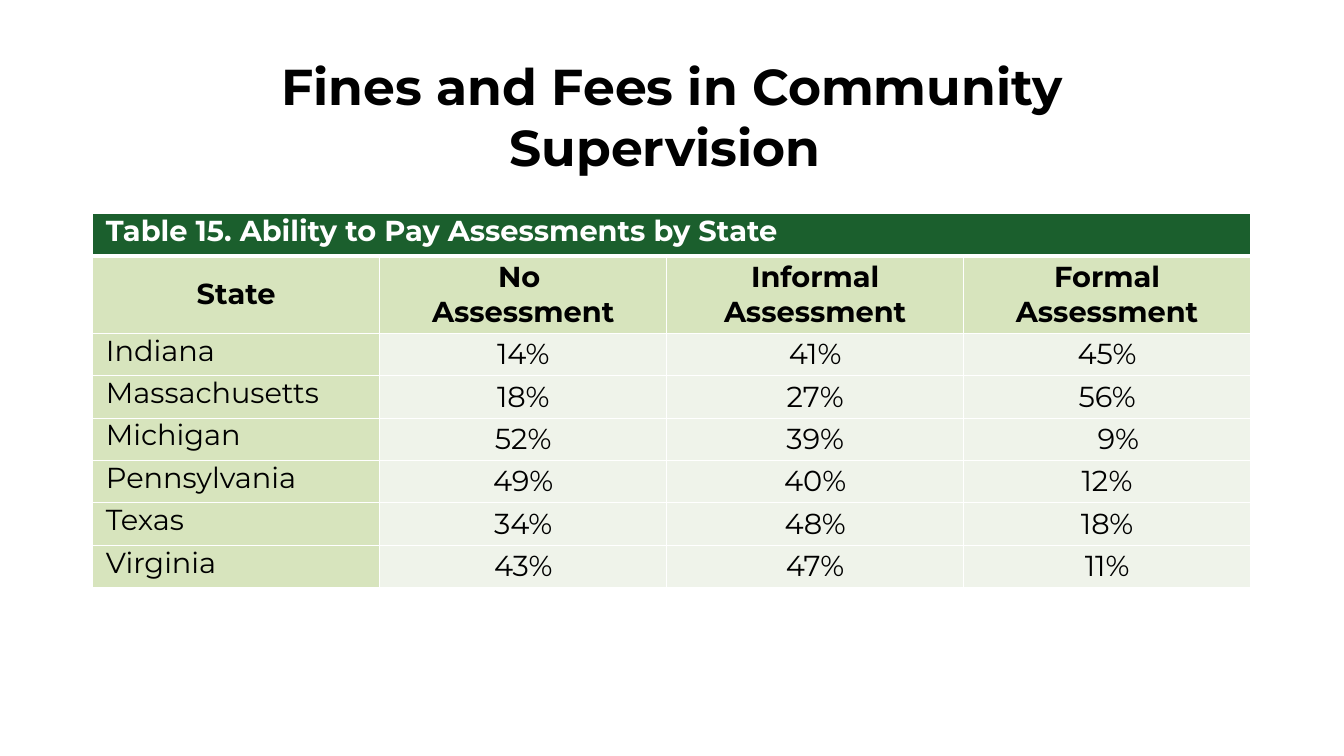
from dataclasses import dataclass

from lxml import etree
from pptx import Presentation
from pptx.dml.color import RGBColor
from pptx.enum import text
from pptx.oxml import ns
from pptx.util import Cm, Pt


@dataclass(frozen=True)
class Theme:
    font: str = "Montserrat"
    title_size: float = 38.4
    table_size: float = 22
    ink: str = "000000"
    white: str = "FFFFFF"
    banner: str = "1B5F2D"
    label: str = "D7E4BD"
    value: str = "EFF3EA"
    inset: float = 0.36


class SlideBuilder:
    def __init__(self, slide, theme):
        self.slide = slide
        self.theme = theme

    def add_lines(self, frame, lines, size, color, bold, align):
        for index, line in enumerate(lines):
            paragraph = frame.paragraphs[0] if index == 0 else frame.add_paragraph()
            paragraph.alignment = align
            run = paragraph.add_run()
            run.text = line
            run.font.name = self.theme.font
            run.font.size = Pt(size)
            run.font.bold = bold
            run.font.color.rgb = RGBColor.from_string(color)

    def title(self, words, left, top, width, height):
        shape = self.slide.shapes.add_textbox(Cm(left), Cm(top), Cm(width), Cm(height))
        frame = shape.text_frame
        frame.word_wrap = True
        frame.vertical_anchor = text.MSO_ANCHOR.MIDDLE
        frame.margin_left = frame.margin_right = Cm(self.theme.inset)
        self.add_lines(frame, [words], self.theme.title_size, self.theme.ink, True,
                       text.PP_ALIGN.CENTER)

    def table(self, left, top, widths, heights):
        frame = self.slide.shapes.add_table(
            len(heights), len(widths), Cm(left), Cm(top),
            Cm(sum(widths)), Cm(sum(heights)))
        table = frame.table
        for column, width in zip(table.columns, widths):
            column.width = Cm(width)
        for row, height in zip(table.rows, heights):
            row.height = Cm(height)
        return table

    def borders(self, cell, top, bottom):
        properties = cell._tc.get_or_add_tcPr()
        for side, points in (("L", 1), ("R", 1), ("T", top), ("B", bottom)):
            line = etree.SubElement(properties, ns.qn(f"a:ln{side}"), w=str(Pt(points)))
            fill = etree.SubElement(line, ns.qn("a:solidFill"))
            etree.SubElement(fill, ns.qn("a:srgbClr"), val=self.theme.white)

    def cell(self, cell, lines, fill, color=None, bold=False, centered=True,
             top=1, bottom=1, indent=0):
        self.borders(cell, top, bottom)
        cell.fill.solid()
        cell.fill.fore_color.rgb = RGBColor.from_string(fill)
        cell.margin_left = Cm(self.theme.inset + indent)
        cell.margin_right = Cm(self.theme.inset)
        cell.margin_top = cell.margin_bottom = 0
        cell.vertical_anchor = text.MSO_ANCHOR.MIDDLE if centered else text.MSO_ANCHOR.TOP
        align = text.PP_ALIGN.CENTER if centered else text.PP_ALIGN.LEFT
        self.add_lines(cell.text_frame, lines, self.theme.table_size,
                       color or self.theme.ink, bold, align)


HEADERS = [["State"], ["No ", "Assessment"], ["Informal Assessment"], ["Formal Assessment"]]
ASSESSMENTS = [
    ("Indiana", 14, 41, 45),
    ("Massachusetts", 18, 27, 56),
    ("Michigan", 52, 39, 9),
    ("Pennsylvania", 49, 40, 12),
    ("Texas", 34, 48, 18),
    ("Virginia", 43, 47, 11),
]


def main():
    theme = Theme()
    presentation = Presentation()
    presentation.slide_width = Cm(36.14)
    presentation.slide_height = Cm(20.32)
    slide = presentation.slides.add_slide(presentation.slide_layouts[6])
    builder = SlideBuilder(slide, theme)

    # Title
    builder.title("Fines and Fees in Community Supervision ", 3, 1.47, 30.15, 3.3)

    # Table banner across all columns
    table = builder.table(2.49, 5.74, [7.72, 7.72, 7.98, 7.72],
                          [1.14, 2.08] + [1.14] * len(ASSESSMENTS))
    table.cell(0, 0).merge(table.cell(0, 3))
    for column in range(4):
        lines = ["Table 15. Ability to Pay Assessments by State"] if column == 0 else []
        builder.cell(table.cell(0, column), lines, theme.banner, theme.white,
                     bold=True, centered=False, bottom=3)

    # Column headers
    for column, lines in enumerate(HEADERS):
        builder.cell(table.cell(1, column), lines, theme.label, bold=True, top=3)

    # States and their shares; single digits are indented to line up
    for row, (state, *shares) in enumerate(ASSESSMENTS, start=2):
        builder.cell(table.cell(row, 0), [state], theme.label, centered=False)
        for column, share in enumerate(shares, start=1):
            builder.cell(table.cell(row, column), [f"{share}%"], theme.value,
                         indent=0.6 if share < 10 else 0)

    presentation.save("out.pptx")


if __name__ == "__main__":
    main()
